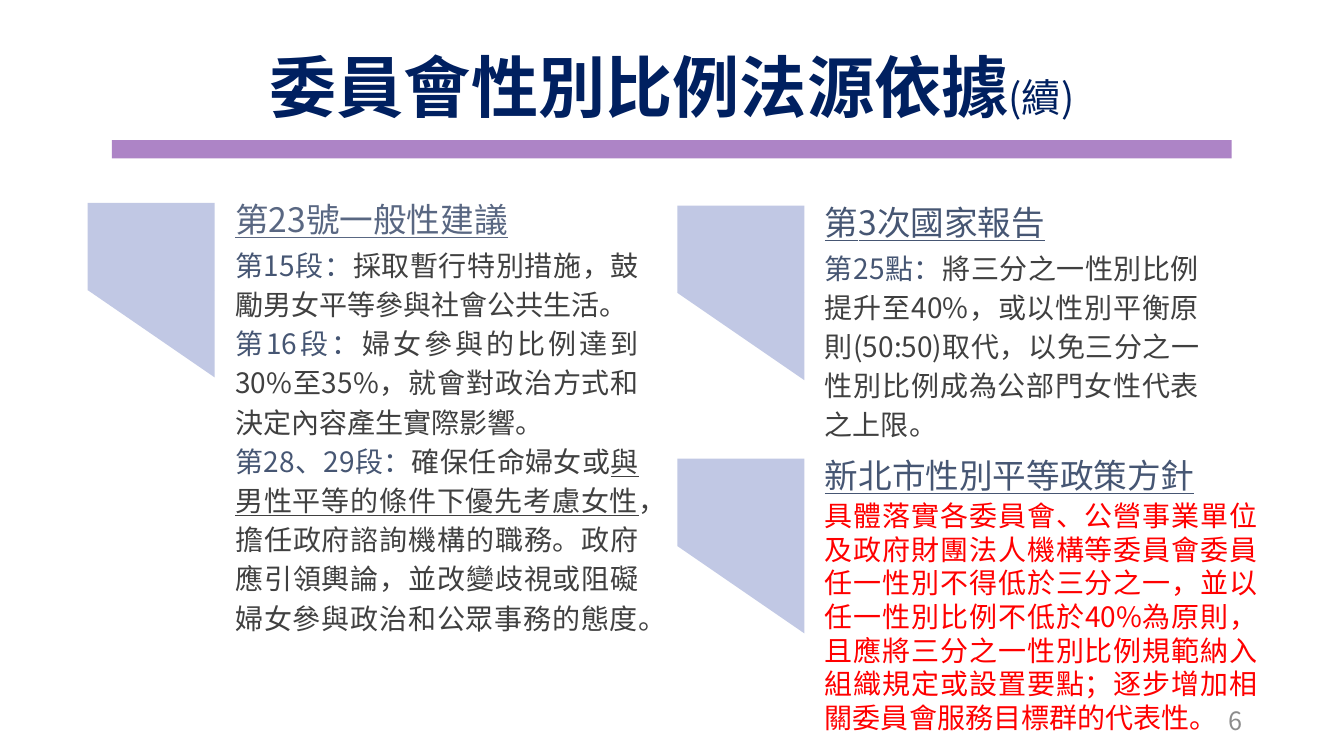
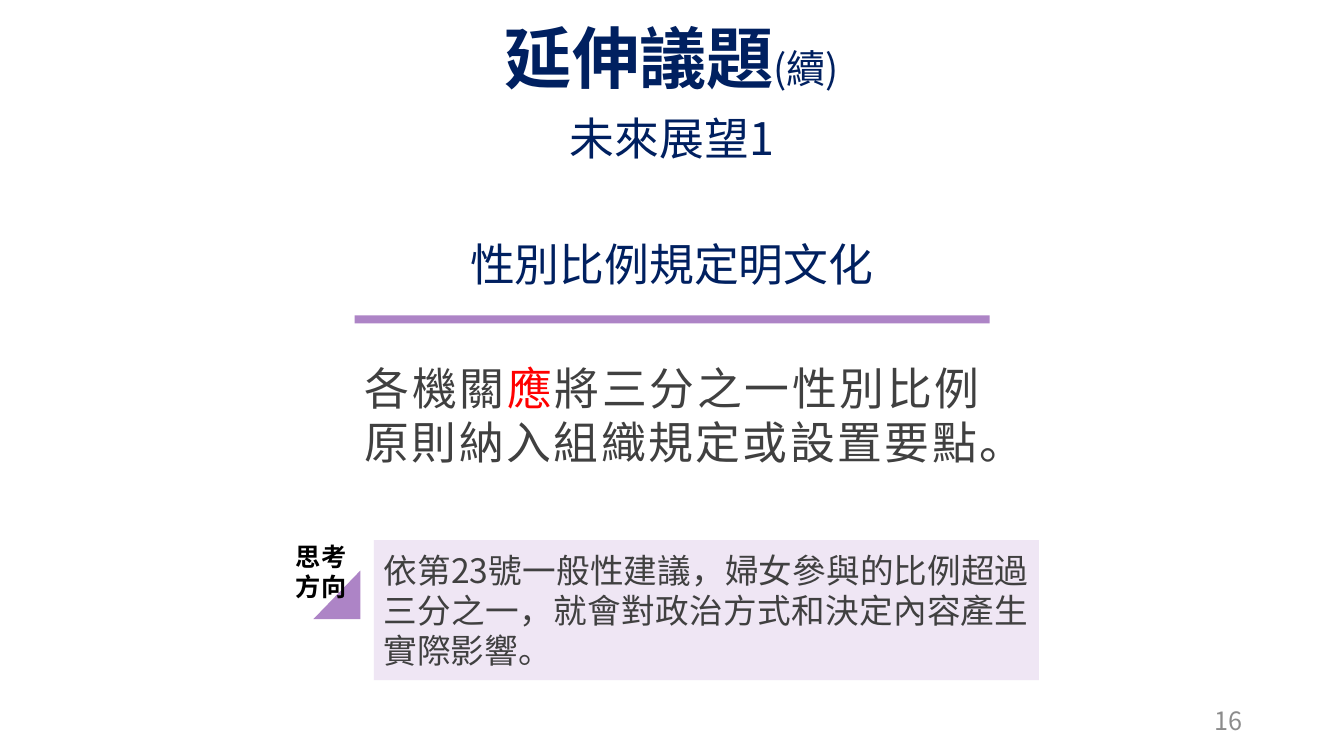
from lxml import etree
from pptx import Presentation
from pptx.dml.color import RGBColor
from pptx.enum import shapes, text
from pptx.oxml import ns
from pptx.util import Cm, Pt

FONT = "Noto Sans CJK SC"
NAVY = RGBColor(0x00, 0x20, 0x60)
SLATE = RGBColor(0x46, 0x56, 0x73)
PALE_SLATE = RGBColor(0x59, 0x67, 0x82)
INK = RGBColor(0x40, 0x40, 0x40)
RED = RGBColor(0xFF, 0x00, 0x00)
BLACK = RGBColor(0x00, 0x00, 0x00)
GREY = RGBColor(0x8C, 0x8C, 0x8C)
PERIWINKLE = RGBColor(0xC1, 0xC8, 0xE4)
PURPLE = RGBColor(0xAD, 0x84, 0xC6)
LILAC = RGBColor(0xEF, 0xE6, 0xF4)

SLIDE_WIDTH = 33.87
SLIDE_HEIGHT = 19.05
LEFT = text.PP_ALIGN.LEFT
CENTER = text.PP_ALIGN.CENTER
RIGHT = text.PP_ALIGN.RIGHT
JUSTIFY = text.PP_ALIGN.JUSTIFY
TOP = text.MSO_ANCHOR.TOP
MIDDLE = text.MSO_ANCHOR.MIDDLE
RECTANGLE = shapes.MSO_SHAPE.RECTANGLE
TRIANGLE = shapes.MSO_SHAPE.ISOSCELES_TRIANGLE


class Slides:
    def __init__(self):
        self.deck = Presentation()
        self.deck.slide_width = Cm(SLIDE_WIDTH)
        self.deck.slide_height = Cm(SLIDE_HEIGHT)
        self.page = None

    def new_page(self, title, title_top, number):
        self.page = self.deck.slides.add_slide(self.deck.slide_layouts[5])
        box = self.page.shapes.title
        box.left, box.top = Cm(0), Cm(title_top)
        box.width, box.height = Cm(SLIDE_WIDTH), Cm(2.13)
        box.text_frame.auto_size = text.MSO_AUTO_SIZE.NONE
        spans = [(title, NAVY, {"bold": True}), ("(續)", NAVY, {"size": Pt(28)})]
        self.fill_text(box, [spans], 48, CENTER, 52, MIDDLE)
        self.text_box(23.93, 17.65, 7.62, 1.02, [[(number, GREY)]], 18, RIGHT, anchor=MIDDLE)

    def fill_text(self, box, paragraphs, size, align, spacing=None, anchor=TOP):
        frame = box.text_frame
        frame.word_wrap = True
        frame.vertical_anchor = anchor
        for index, spans in enumerate(paragraphs):
            para = frame.add_paragraph() if index else frame.paragraphs[0]
            para.alignment = align
            para.line_spacing = Pt(spacing or size * 1.2)
            for words, colour, *options in spans:
                span = para.add_run()
                span.text = words
                span.font.size = Pt(size)
                span.font.bold = False
                span.font.color.rgb = colour
                span.font.name = FONT
                for option in options:
                    span.font.size = option.get("size", Pt(size))
                    span.font.bold = option.get("bold", False)
                    span.font.underline = option.get("underline")
                east_asian = etree.SubElement(span.font._element, ns.qn("a:ea"))
                east_asian.set("typeface", FONT)

    def text_box(self, left, top, width, height, paragraphs, size, align=LEFT,
                 spacing=None, anchor=TOP):
        box = self.page.shapes.add_textbox(Cm(left), Cm(top), Cm(width), Cm(height))
        self.fill_text(box, paragraphs, size, align, spacing, anchor)
        return box

    def subtitle(self, top, words):
        box = self.text_box(0, top, SLIDE_WIDTH, 1.07, [[(words, NAVY)]], 32, CENTER, 34.5)
        box.text_frame.margin_top = box.text_frame.margin_bottom = 0

    def shape(self, kind, left, top, width, height, colour):
        box = self.page.shapes.add_shape(kind, Cm(left), Cm(top), Cm(width), Cm(height))
        box.shadow.inherit = False
        box.fill.solid()
        box.fill.fore_color.rgb = colour
        box.line.fill.background()
        return box

    def flag(self, left, top):
        width, height = 3.2, 2.2
        self.shape(RECTANGLE, left, top, width, height, PERIWINKLE)
        tail = self.shape(TRIANGLE, left, top + height, width, height, PERIWINKLE)
        tail.adjustments[0] = 0
        tail.rotation = 180

    def section(self, left, top, width, height, heading, colour, paragraphs, spacing=None):
        self.flag(left, top)
        text_left = left + 3.47
        self.text_box(text_left, top + 0.88, width, height, paragraphs, 20, JUSTIFY, spacing)
        heading_span = (heading, colour, {"underline": True})
        self.text_box(text_left, top - 0.22, width, 1.27, [[heading_span]], 24)


def legal_basis(slides):
    slides.new_page("委員會性別比例法源依據", 1.19, "6")
    slides.section(2.21, 5.11, 10.67, 10.24, "第23號一般性建議", PALE_SLATE, [
        [("第15段：", SLATE), ("採取暫行特別措施，鼓勵男女平等參與社會公共生活。", INK)],
        [("第16段：", SLATE),
         ("婦女參與的比例達到30%至35%，就會對政治方式和決定內容產生實際影響。", INK)],
        [("第28、29段：", SLATE), ("確保任命婦女或", INK),
         ("與男性平等的條件下優先考慮女性", INK, {"underline": True}),
         ("，擔任政府諮詢機構的職務。政府應引領輿論，"
          "並改變歧視或阻礙婦女參與政治和公眾事務的態度。", INK)],
    ], 28)
    slides.section(17.07, 5.18, 9.93, 5.23, "第3次國家報告", SLATE, [
        [("第25點：", SLATE),
         ("將三分之一性別比例提升至40%，或以性別平衡原則(50:50)取代，"
          "以免三分之一性別比例成為公部門女性代表之上限。", INK)],
    ], 28)
    slides.section(17.07, 11.56, 11.4, 6.25, "新北市性別平等政策方針", SLATE, [
        [("具體落實各委員會、公營事業單位及政府財團法人機構等委員會委員"
          "任一性別不得低於三分之一，並以任一性別比例不低於40%為原則，"
          "且應將三分之一性別比例規範納入組織規定或設置要點；"
          "逐步增加相關委員會服務目標群的代表性。", RED)],
    ])
    slides.shape(RECTANGLE, 2.82, 3.53, 28.22, 0.46, PURPLE)


def outlook(slides):
    slides.new_page("延伸議題", 0.46, "16")
    slides.subtitle(2.92, "未來展望1")
    slides.subtitle(6.1, "性別比例規定明文化")
    slides.shape(RECTANGLE, 8.94, 7.95, 16, 0.2, PURPLE)
    slides.text_box(8.94, 8.97, 16, 3, [
        [("各機關", INK), ("應", RED), ("將三分之一性別比例原則納入組織規定或設置要點。", INK)],
    ], 32, JUSTIFY)
    advice = slides.shape(RECTANGLE, 9.42, 13.61, 16.76, 3.53, LILAC)
    slides.fill_text(advice, [
        [("依第23號一般性建議，婦女參與的比例超過三分之一，"
          "就會對政治方式和決定內容產生實際影響。", INK)],
    ], 24, JUSTIFY, anchor=MIDDLE)
    corner = slides.shape(TRIANGLE, 7.9, 14.38, 1.18, 1.22, PURPLE)
    corner.adjustments[0] = 1
    slides.text_box(7.21, 13.51, 1.88, 1.96, [[("思考方向", BLACK, {"bold": True})]], 18)


def main():
    slides = Slides()
    legal_basis(slides)
    outlook(slides)
    slides.deck.save("out.pptx")


if __name__ == "__main__":
    main()
